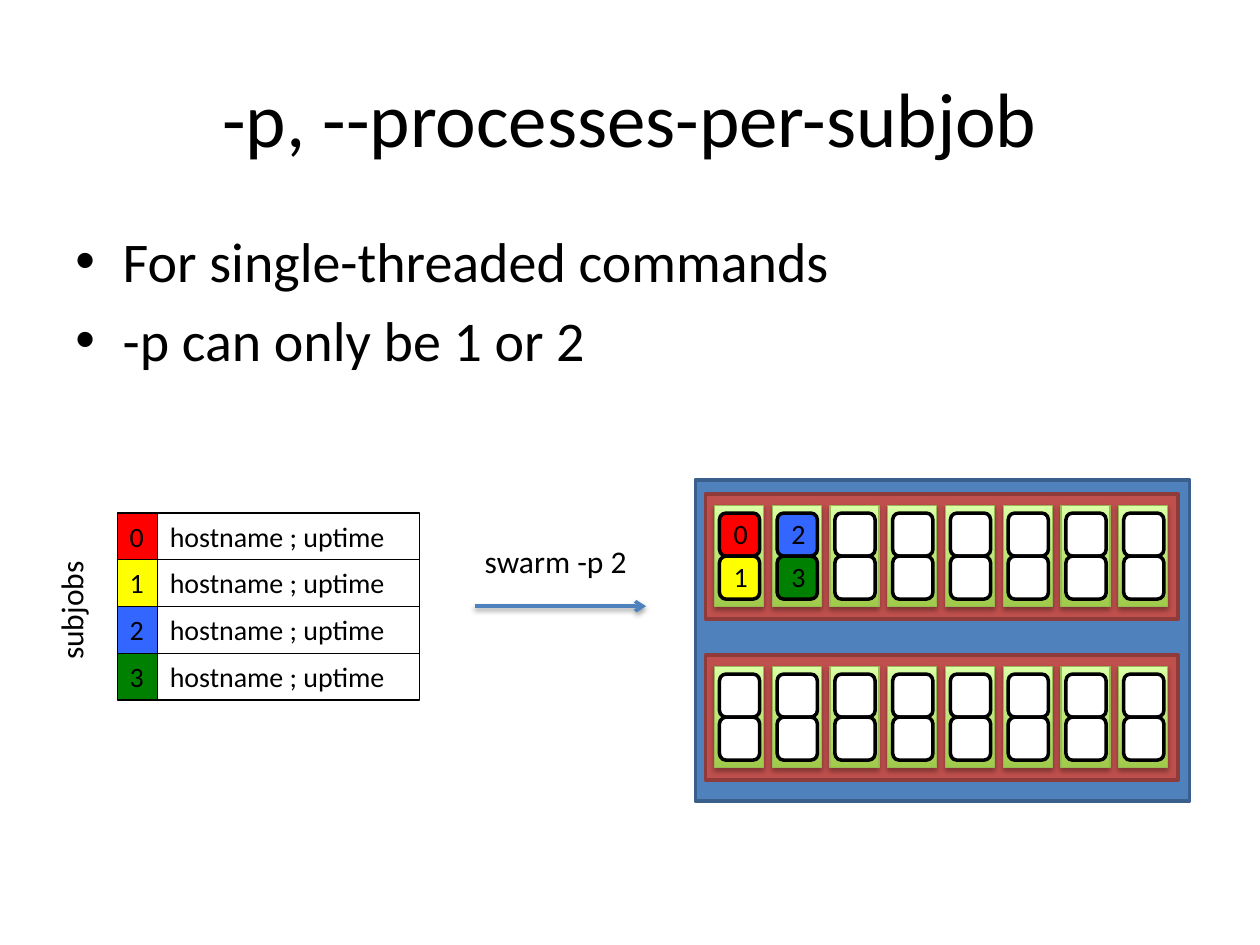
from pptx import Presentation
from pptx.dml.color import RGBColor
from pptx.enum.shapes import MSO_CONNECTOR, MSO_SHAPE
from pptx.enum.text import MSO_ANCHOR, PP_ALIGN
from pptx.oxml import parse_xml
from pptx.oxml.ns import nsdecls
from pptx.util import Pt

FONT = "Calibri"
BLACK = RGBColor(0x00, 0x00, 0x00)
WHITE = RGBColor(0xFF, 0xFF, 0xFF)
BLUE = RGBColor(0x4F, 0x81, 0xBD)
BLUE_EDGE = RGBColor(0x3A, 0x5F, 0x8C)
RED = RGBColor(0xC0, 0x50, 0x4D)
RED_EDGE = RGBColor(0x8E, 0x3B, 0x39)
GREEN_DARK = RGBColor(0xA0, 0xCA, 0x4A)
GREEN_LIGHT = RGBColor(0xDA, 0xFF, 0xA5)
GREEN_EDGE = RGBColor(0x98, 0xB9, 0x55)
SUBJOB_COLORS = [
    RGBColor(0xFF, 0x00, 0x00),
    RGBColor(0xFF, 0xFF, 0x00),
    RGBColor(0x33, 0x66, 0xFF),
    RGBColor(0x00, 0x80, 0x00),
]

ROW_HEIGHT = 26.7
CORE_COUNT = 8
CORE_PITCH = 33
THREAD_WIDTH, THREAD_HEIGHT = 23, 24.6


def add_run(paragraph, text, size):
    run = paragraph.add_run()
    run.text = text
    run.font.name = FONT
    run.font.size = Pt(size)
    run.font.color.rgb = BLACK


def add_text(slide, box, lines, size, align=PP_ALIGN.LEFT, anchor=MSO_ANCHOR.TOP,
             wrap=False, bullet=False):
    shape = slide.shapes.add_textbox(*map(Pt, box))
    frame = shape.text_frame
    frame.word_wrap = wrap
    frame.vertical_anchor = anchor
    for index, line in enumerate(lines):
        paragraph = frame.paragraphs[0] if index == 0 else frame.add_paragraph()
        paragraph.alignment = align
        add_run(paragraph, line, size)
        if bullet:
            paragraph.space_before = Pt(6.4)
            properties = paragraph._p.get_or_add_pPr()
            properties.set("marL", str(Pt(27)))
            properties.set("indent", str(-Pt(27)))
            properties.append(parse_xml(f'<a:buFont {nsdecls("a")} typeface="Arial"/>'))
            properties.append(parse_xml(f'<a:buChar {nsdecls("a")} char="•"/>'))
    return shape


def add_box(slide, box, fill, edge, edge_width, kind=MSO_SHAPE.RECTANGLE):
    shape = slide.shapes.add_shape(kind, *map(Pt, box))
    shape.shadow.inherit = False
    if fill is None:
        shape.fill.background()
    else:
        shape.fill.solid()
        shape.fill.fore_color.rgb = fill
    shape.line.color.rgb = edge
    shape.line.width = Pt(edge_width)
    return shape


def add_cell(slide, box, text, fill=None):
    shape = add_box(slide, box, fill, BLACK, 0.75)
    frame = shape.text_frame
    frame.word_wrap = fill is None
    frame.vertical_anchor = MSO_ANCHOR.TOP
    frame.paragraphs[0].alignment = PP_ALIGN.LEFT
    add_run(frame.paragraphs[0], text, 16)


def add_shadow(shape, blur, distance, opacity):
    properties = shape._element.spPr
    for old in properties.findall("{*}effectLst"):
        properties.remove(old)
    properties.append(parse_xml(
        f'<a:effectLst {nsdecls("a")}><a:outerShdw blurRad="{Pt(blur)}" '
        f'dist="{Pt(distance)}" dir="5400000" rotWithShape="0"><a:srgbClr val="000000">'
        f'<a:alpha val="{opacity * 1000}"/></a:srgbClr></a:outerShdw></a:effectLst>'))


def add_arrow(slide, left, right, y):
    arrow = slide.shapes.add_connector(
        MSO_CONNECTOR.STRAIGHT, Pt(left), Pt(y), Pt(right), Pt(y))
    arrow.line.color.rgb = BLUE
    arrow.line.width = Pt(2)
    arrow.line._get_or_add_ln().append(
        parse_xml(f'<a:tailEnd {nsdecls("a")} type="arrow"/>'))
    add_shadow(arrow, 3.1, 1.6, 38)


def add_core(slide, left, top):
    core = add_box(slide, (left, top, 28, 57.6), WHITE, GREEN_EDGE, 0.75)
    core.fill.gradient()
    core.fill.gradient_angle = 90
    for stop, color in zip(core.fill.gradient_stops, (GREEN_DARK, GREEN_LIGHT)):
        stop.color.rgb = color
    add_shadow(core, 3.1, 1.8, 35)


def add_thread(slide, left, top, subjob=None):
    fill = WHITE if subjob is None else SUBJOB_COLORS[subjob]
    add_box(slide, (left, top, THREAD_WIDTH, THREAD_HEIGHT), fill, BLACK, 2,
            MSO_SHAPE.ROUNDED_RECTANGLE)
    if subjob is not None:
        add_text(slide, (left + 1, top - 1.4, THREAD_WIDTH, ROW_HEIGHT), [str(subjob)], 16)


def add_socket(slide, top, subjob_count=0):
    add_box(slide, (403.2, top, 270, 71.3), RED, RED_EDGE, 2)
    for core in range(CORE_COUNT):
        left = 408.3 + core * CORE_PITCH
        add_core(slide, left, top + 6.5)
        for thread in range(2):
            subjob = 2 * core + thread
            add_thread(slide, left + 2.8, top + 10.8 + thread * THREAD_HEIGHT,
                       subjob if subjob < subjob_count else None)


def main():
    presentation = Presentation()
    presentation.slide_width, presentation.slide_height = Pt(720), Pt(540)
    slide = presentation.slides.add_slide(presentation.slide_layouts[6])

    # Title and bullets
    add_text(slide, (36, 21.6, 648, 90), ["-p, --processes-per-subjob"], 44,
             PP_ALIGN.CENTER, MSO_ANCHOR.MIDDLE, wrap=True)
    add_text(slide, (36, 126, 648, 356.4),
             ["For single-threaded commands", "-p can only be 1 or 2"], 32,
             wrap=True, bullet=True)

    # Subjob list
    label = add_text(slide, (5, 334, 71.3, 29), ["subjobs"], 18)
    label.rotation = 270
    for subjob, color in enumerate(SUBJOB_COLORS):
        top = 293.2 + subjob * ROW_HEIGHT
        add_cell(slide, (67, top, 23, ROW_HEIGHT), str(subjob), color)
        add_cell(slide, (90, top, 149.6, ROW_HEIGHT), "hostname ; uptime")

    # Command arrow
    add_text(slide, (269.3, 306, 96.5, 29), ["swarm -p 2"], 18, PP_ALIGN.CENTER)
    add_arrow(slide, 271.2, 369.2, 346.4)

    # Node with two sockets
    add_box(slide, (397.4, 274.2, 282.4, 183.6), BLUE, BLUE_EDGE, 2)
    add_socket(slide, 282.4, len(SUBJOB_COLORS))
    add_socket(slide, 374.4)

    presentation.save("out.pptx")


if __name__ == "__main__":
    main()
